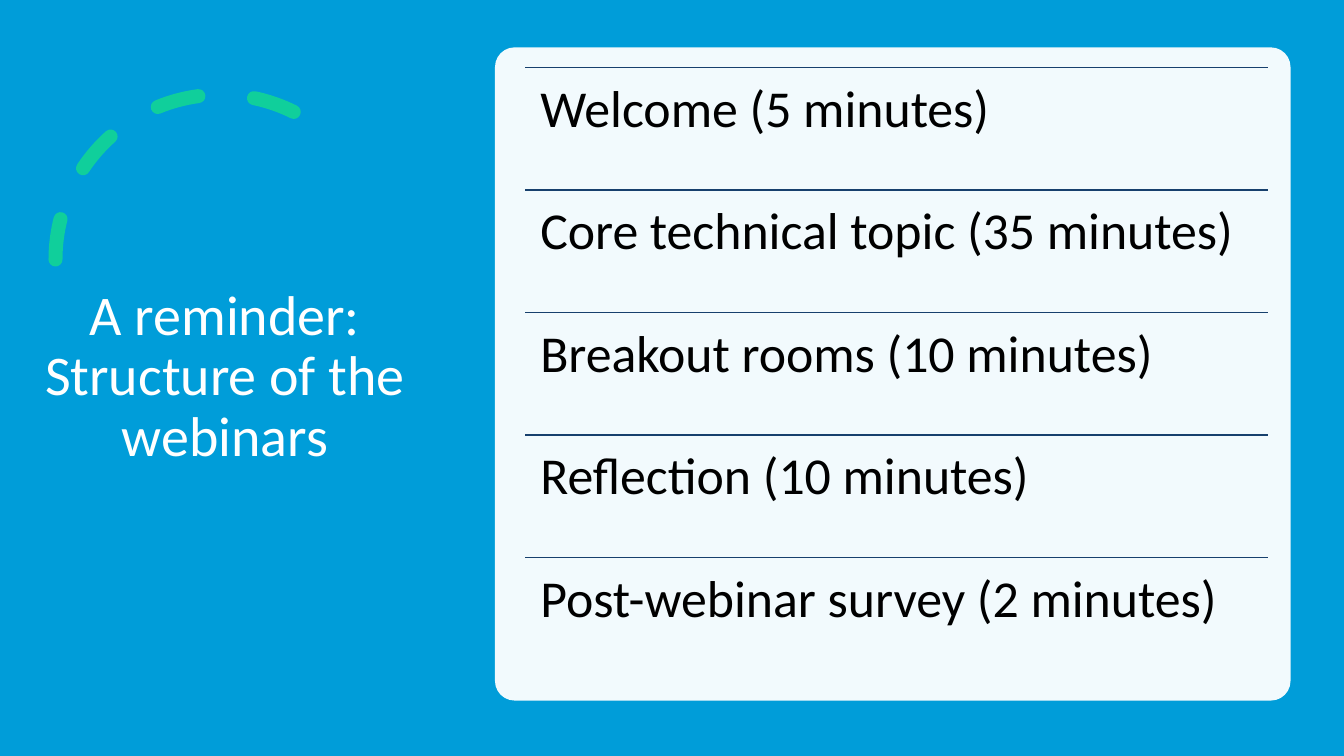
from dataclasses import dataclass

from lxml import etree
from pptx import Presentation
from pptx import util as u
from pptx.dml.color import RGBColor
from pptx.enum import dml, shapes, text
from pptx.oxml.ns import qn


@dataclass(frozen=True)
class Theme:
    background: RGBColor = RGBColor.from_string("009DD9")
    accent: RGBColor = RGBColor.from_string("10CF9B")
    rule: RGBColor = RGBColor.from_string("17406D")
    light: RGBColor = RGBColor.from_string("FFFFFF")
    dark: RGBColor = RGBColor.from_string("000000")
    font: str = "Calibri"
    title_size: u.Pt = u.Pt(40)
    agenda_size: u.Pt = u.Pt(37)


theme = Theme()
title_text = "A reminder: Structure of the webinars"
agenda = [
    "Welcome (5 minutes)",
    "Core technical topic (35 minutes)",
    "Breakout rooms (10 minutes)",
    "Reflection (10 minutes)",
    "Post-webinar survey (2 minutes)",
]

presentation = Presentation()
presentation.slide_width = u.Inches(13.33)
presentation.slide_height = u.Inches(7.5)
slide = presentation.slides.add_slide(presentation.slide_layouts[5])


def box(left, top, width, height):
    """Turn percentages of the slide into lengths."""
    column = presentation.slide_width / 100
    row = presentation.slide_height / 100
    return [round(n) for n in (left * column, top * row, width * column, height * row)]


def write(frame, words, size, color, alignment):
    """Put one formatted run into a text frame."""
    frame.word_wrap = True
    frame.auto_size = text.MSO_AUTO_SIZE.NONE
    paragraph = frame.paragraphs[0]
    paragraph.alignment = alignment
    paragraph.line_spacing = 0.9
    run = paragraph.add_run()
    run.text = words
    run.font.name = theme.font
    run.font.size = size
    run.font.color.rgb = color


# Blue backdrop
backdrop = slide.shapes.add_shape(shapes.MSO_SHAPE.RECTANGLE, *box(0, 0, 100, 100))
backdrop.shadow.inherit = False
backdrop.fill.solid()
backdrop.fill.fore_color.rgb = theme.background
backdrop.line.fill.background()

# Dashed arc, mirrored, with round ends
arc = slide.shapes.add_shape(shapes.MSO_SHAPE.ARC, *box(4.13, 12.53, 24.53, 43.6))
arc.shadow.inherit = False
arc.adjustments[0] = 146.13
arc.adjustments[1] = 0
arc.fill.background()
arc.line.color.rgb = theme.accent
arc.line.width = u.Pt(10)
arc.line.dash_style = dml.MSO_LINE.DASH
arc.element.spPr.find(qn("a:ln")).set("cap", "rnd")
arc.element.spPr.find(qn("a:xfrm")).set("flipH", "1")

# Title, lifted above the backdrop
title = slide.shapes.title
title.left, title.top, title.width, title.height = box(2.4, 9.33, 28.66, 81.2)
title.text_frame.vertical_anchor = text.MSO_ANCHOR.MIDDLE
write(title.text_frame, title_text, theme.title_size, theme.light, text.PP_ALIGN.CENTER)
title.element.getparent().append(title.element)

# Translucent agenda card
card = slide.shapes.add_shape(
    shapes.MSO_SHAPE.ROUNDED_RECTANGLE, *box(36.83, 6.27, 59.19, 86.4)
)
card.shadow.inherit = False
card.adjustments[0] = 0.03
card.fill.solid()
card.fill.fore_color.rgb = theme.light
card.line.fill.background()
card_color = card.element.spPr.find(qn("a:solidFill"))[0]
etree.SubElement(card_color, qn("a:alpha")).set("val", "95000")

# Agenda rows: a rule with its item below
row_height = 16.21
group = slide.shapes.add_group_shape()
for index, item in enumerate(agenda):
    left, top, width, height = box(39.08, 8.93 + index * row_height, 55.29, row_height)
    rule = group.shapes.add_connector(
        shapes.MSO_CONNECTOR.STRAIGHT, left, top, left + width, top
    )
    rule.line.color.rgb = theme.rule
    rule.line.width = u.Pt(1)
    etree.SubElement(rule.element.spPr, qn("a:effectLst"))

    frame = group.shapes.add_textbox(left, top, width, height).text_frame
    frame.margin_left = frame.margin_right = u.Inches(0.15)
    frame.margin_top = frame.margin_bottom = u.Inches(0.15)
    write(frame, item, theme.agenda_size, theme.dark, text.PP_ALIGN.LEFT)

presentation.save("out.pptx")
